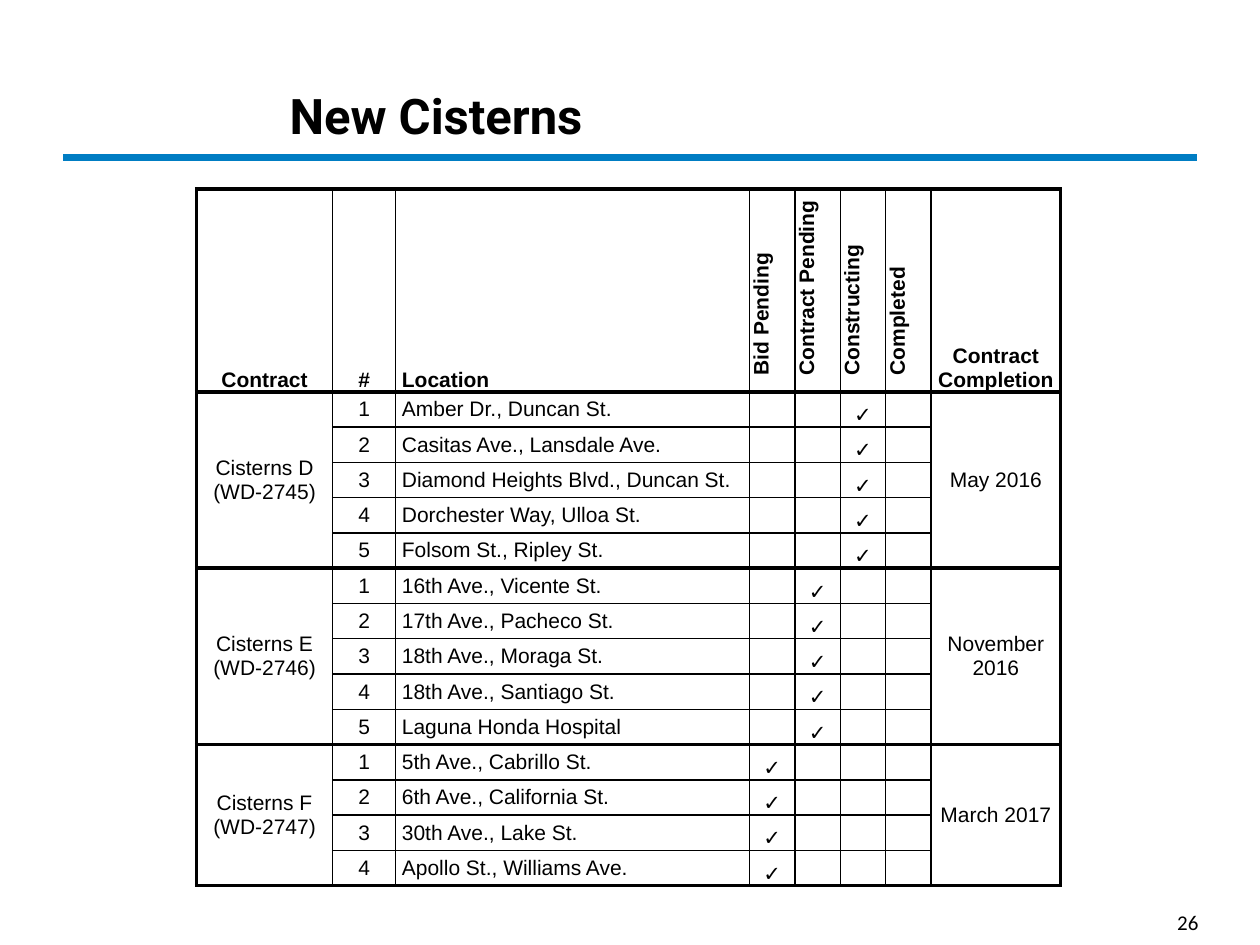
import dataclasses

import lxml.etree
import pptx
import pptx.dml.color
import pptx.enum.shapes
import pptx.enum.text
import pptx.oxml.ns
import pptx.util

Inches = pptx.util.Inches
Pt = pptx.util.Pt
qn = pptx.oxml.ns.qn
ALIGN = pptx.enum.text.PP_ALIGN
ANCHOR = pptx.enum.text.MSO_ANCHOR


@dataclasses.dataclass
class Theme:
    ink: str = "000000"
    rule: str = "007DC3"
    title_size: float = 28
    body_size: float = 12
    rule_width: float = 4.5
    thin: float = 1
    thick: float = 2.25


theme = Theme()


def write(tf, text, font="Arial", size=theme.body_size, bold=False, align=ALIGN.LEFT, spacing=None):
    """Write one paragraph per line of text."""
    for i, line in enumerate(text.split("\n")):
        p = tf.paragraphs[0] if i == 0 else tf.add_paragraph()
        p.alignment = align
        if spacing:
            p.line_spacing = spacing
        if line:
            r = p.add_run()
            r.text = line
            r.font.name = font
            r.font.size = Pt(size)
            r.font.bold = bold
            r.font.color.rgb = pptx.dml.color.RGBColor.from_string(theme.ink)
        else:
            # Keeps an empty cell from growing its row
            lxml.etree.SubElement(p._p, qn("a:endParaRPr"), sz=str(int(size * 100)))


def add_border(cell, side, width):
    ln = lxml.etree.SubElement(cell._tc.get_or_add_tcPr(), qn(f"a:ln{side}"), w=str(int(Pt(width))))
    fill = lxml.etree.SubElement(ln, qn("a:solidFill"))
    lxml.etree.SubElement(fill, qn("a:srgbClr"), val=theme.ink)


prs = pptx.Presentation()
prs.slide_width, prs.slide_height = Inches(10), Inches(7.5)
s = prs.slides.add_slide(prs.slide_layouts[6])

# Rule under the title
rule = s.shapes.add_connector(
    pptx.enum.shapes.MSO_CONNECTOR.STRAIGHT, Inches(0.5), Inches(1.25), Inches(9.5), Inches(1.25))
rule.line.color.rgb = pptx.dml.color.RGBColor.from_string(theme.rule)
rule.line.width = Pt(theme.rule_width)
lxml.etree.SubElement(rule._element.spPr, qn("a:effectLst"))

# Title and page number
for box, anchor, text, style in [
    ((2.2, 0.7, 7.3, 0.5), ANCHOR.MIDDLE, "New Cisterns",
     dict(font="Roboto", size=theme.title_size, bold=True, spacing=0.85)),
    ((7.21, 6.97, 2.4, 0.5), ANCHOR.BOTTOM, "26", dict(font="Calibri", align=ALIGN.RIGHT)),
]:
    tf = s.shapes.add_textbox(*map(Inches, box)).text_frame
    tf.word_wrap = True
    tf.vertical_anchor = anchor
    write(tf, text, **style)

# Table content: contract, completion, status column of the check mark, locations
headers = ["Contract", "#", "Location", "Bid Pending", "Contract Pending",
           "Constructing", "Completed", "Contract Completion"]
contracts = [
    ("Cisterns D\n(WD-2745)", "May 2016", "Constructing",
     ["Amber Dr., Duncan St.", "Casitas Ave., Lansdale Ave.", "Diamond Heights Blvd., Duncan St.",
      "Dorchester Way, Ulloa St.", "Folsom St., Ripley St."]),
    ("Cisterns E\n(WD-2746)", "November 2016", "Contract Pending",
     ["16th Ave., Vicente St.", "17th Ave., Pacheco St.", "18th Ave., Moraga St.",
      "18th Ave., Santiago St.", "Laguna Honda Hospital"]),
    ("Cisterns F\n(WD-2747)", "March 2017", "Bid Pending",
     ["5th Ave., Cabrillo St.", "6th Ave., California St.", "30th Ave., Lake St.",
      "Apollo St., Williams Ave."]),
]
rows = [headers]
group_ends = [0]
for contract, completion, status, locations in contracts:
    for number, location in enumerate(locations, 1):
        first = number == 1
        checks = ["✓" if name == status else "" for name in headers[3:7]]
        rows.append([contract if first else "", str(number), location, *checks,
                     completion if first else ""])
    group_ends.append(len(rows) - 1)

# Table grid
col_widths = [1.08, 0.5, 2.81, 0.36, 0.36, 0.36, 0.36, 1.03]
last_col = len(headers) - 1
table = s.shapes.add_table(len(rows), len(headers), Inches(1.56), Inches(1.5),
                           Inches(6.88), Inches(5.5)).table
table.first_row = table.horz_banding = False
for column, width in zip(table.columns, col_widths):
    column.width = Inches(width)
for i, row in enumerate(table.rows):
    row.height = Inches(0.28 if i else 1.61)
for above, end in zip(group_ends, group_ends[1:]):
    for j in (0, last_col):
        table.cell(above + 1, j).merge(table.cell(end, j))

# Cells
for i, values in enumerate(rows):
    for j, text in enumerate(values):
        cell = table.cell(i, j)
        is_status = 3 <= j < last_col
        cell.margin_left = cell.margin_right = Inches(0.05)
        cell.margin_top = cell.margin_bottom = 0
        rotated = i == 0 and is_status
        left = j == 2 or rotated
        write(cell.text_frame, text, bold=i == 0 or is_status,
              align=ALIGN.LEFT if left else ALIGN.CENTER)
        if rotated:
            cell.vertical_anchor = ANCHOR.TOP
            cell._tc.get_or_add_tcPr().set("vert", "vert270")
            cell.text_frame.paragraphs[0]._p.get_or_add_pPr().set("marL", str(Inches(0.08)))
        else:
            cell.vertical_anchor = ANCHOR.BOTTOM if i == 0 or is_status else ANCHOR.MIDDLE

        # Thick lines frame the table and each contract
        bottom_row = i + (cell.span_height if cell.is_merge_origin else 1) - 1
        for side, heavy in [("L", j == 0), ("R", j == last_col),
                            ("T", i == 0 or i - 1 in group_ends), ("B", bottom_row in group_ends)]:
            add_border(cell, side, theme.thick if heavy else theme.thin)
        cell.fill.background()

prs.save("out.pptx")
